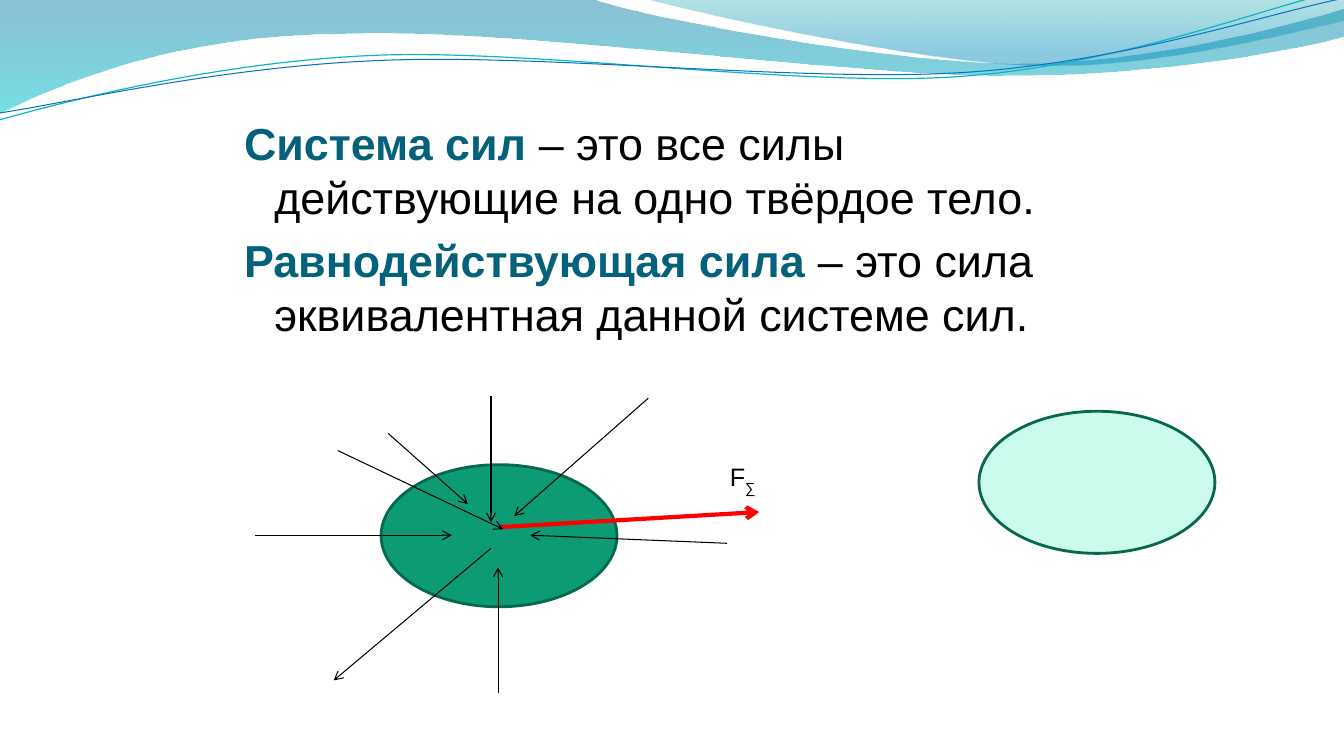
import pptx
import pptx.util
import pptx.dml.color
import pptx.enum.shapes
import pptx.enum.text
import pptx.oxml.ns
import lxml.etree

PX = 9144
COLORS = {
    "ink": "000000",
    "term": "04617B",
    "body": "0C9B74",
    "pale": "CAFBED",
    "rim": "08684E",
    "resultant": "FF0000",
    "deep": "0074A1",
    "aqua": "00C6CF",
    "teal": "00A1A9",
    "sky": "008BBF",
    "cyan_line": "0AB8BF",
    "blue_line": "0F6FC6",
}


def px(length):
    return pptx.util.Emu(round(length * PX))


def rgb(name):
    return pptx.dml.color.RGBColor.from_string(COLORS[name])


def add_xml(parent, tag, **attributes):
    return lxml.etree.SubElement(parent, pptx.oxml.ns.qn(tag), attributes)


def write(paragraph, text, size=32, color="ink", bold=False, baseline=0):
    run = paragraph.add_run()
    run.text = text
    run.font.name = "Arial"
    run.font.size = pptx.util.Pt(size)
    run.font.bold = bold
    run.font.color.rgb = rgb(color)
    if baseline:
        run.font._element.set("baseline", str(baseline * 1000))


class Board:
    def __init__(self, deck):
        self.slide = deck.slides.add_slide(deck.slide_layouts[1])
        self.shapes = self.slide.shapes
        heading = self.shapes.title._element
        heading.getparent().remove(heading)

    def outline(self, start, pieces, close):
        builder = self.shapes.build_freeform(*map(px, start), scale=1.0)
        builder.add_line_segments([tuple(map(px, piece[-2:])) for piece in pieces], close=close)
        shape = builder.convert_to_shape()
        shape.shadow.inherit = False
        segments = list(shape._element.iter(pptx.oxml.ns.qn("a:lnTo")))
        for piece, segment in zip(pieces, segments):
            if len(piece) == 6:
                curve = lxml.etree.Element(pptx.oxml.ns.qn("a:cubicBezTo"))
                for x, y in zip(piece[::2], piece[1::2]):
                    add_xml(curve, "a:pt", x=str(px(x) - shape.left), y=str(px(y) - shape.top))
                segment.getparent().replace(segment, curve)
        return shape

    def wave(self, start, pieces, stops):
        shape = self.outline(start, pieces, True)
        shape.line.fill.background()
        shape.fill.gradient()
        shape.fill.gradient_angle = 270
        for stop, (position, color, opacity) in zip(shape.fill.gradient_stops, stops):
            stop.position = position
            stop.color.rgb = rgb(color)
            tint = stop._gs.find(pptx.oxml.ns.qn("a:srgbClr"))
            add_xml(tint, "a:alpha", val=str(opacity * 1000))

    def ripple(self, start, pieces, color, width):
        shape = self.outline(start, pieces, False)
        shape.fill.background()
        shape.line.color.rgb = rgb(color)
        shape.line.width = pptx.util.Pt(width)

    def definitions(self, box, entries):
        body = self.slide.placeholders[1]
        body.left, body.top, body.width, body.height = map(px, box)
        frame = body.text_frame
        frame.auto_size = pptx.enum.text.MSO_AUTO_SIZE.NONE
        for index, (term, meaning) in enumerate(entries):
            paragraph = frame.add_paragraph() if index else frame.paragraphs[0]
            paragraph.space_before = pptx.util.Pt(6.4)
            properties = paragraph._p.get_or_add_pPr()
            properties.set("marL", str(px(30)))
            properties.set("indent", str(px(-30)))
            add_xml(properties, "a:buNone")
            write(paragraph, term, color="term", bold=True)
            write(paragraph, meaning)

    def ellipse(self, left, top, fill):
        oval = pptx.enum.shapes.MSO_SHAPE.OVAL
        shape = self.shapes.add_shape(oval, px(left), px(top), px(234), px(141))
        shape.shadow.inherit = False
        shape.fill.solid()
        shape.fill.fore_color.rgb = rgb(fill)
        shape.line.color.rgb = rgb("rim")
        shape.line.width = pptx.util.Pt(2)

    def force(self, ends, color="ink", width=0.75):
        straight = pptx.enum.shapes.MSO_CONNECTOR.STRAIGHT
        arrow = self.shapes.add_connector(straight, *map(px, ends))
        arrow.line.color.rgb = rgb(color)
        arrow.line.width = pptx.util.Pt(width)
        add_xml(arrow.line._get_or_add_ln(), "a:tailEnd", type="arrow")
        add_xml(arrow._element.spPr, "a:effectLst")

    def label(self, box, text, subscript):
        frame = self.shapes.add_textbox(*map(px, box)).text_frame
        frame.word_wrap = False
        write(frame.paragraphs[0], text, size=18)
        write(frame.paragraphs[0], subscript, size=18, baseline=-25)


def main():
    deck = pptx.Presentation()
    deck.slide_width, deck.slide_height = px(1333), px(750)
    board = Board(deck)

    board.wave(
        (0, -1),
        [(587, -1), (634, 17, 885, 63, 1011, 63), (1138, 63, 1278, 26, 1333, 9),
         (1335, 36), (1311, 44, 1160, 76, 994, 75), (829, 75, 509, 28, 343, 34),
         (172, 35, 61, 83, -1, 113)],
        [(0, "deep", 45), (1, "aqua", 55)])
    board.wave(
        (639, -1),
        [(679, 11, 909, 62, 1025, 65), (1141, 69, 1282, 32, 1333, 21), (1333, 0)],
        [(0, "teal", 30), (0.8, "sky", 45)])
    board.ripple(
        (-1, 119),
        [(64, 101, 211, 62, 369, 55), (527, 48, 790, 87, 950, 76),
         (1110, 65, 1252, 8, 1331, -10)],
        "cyan_line", 0.85)
    board.ripple(
        (0, 112),
        [(63, 103, 218, 66, 378, 60), (537, 53, 796, 82, 955, 72),
         (1115, 62, 1255, 14, 1334, -2)],
        "blue_line", 0.75)

    board.definitions((232, 110, 900, 515), [
        ("Система сил ", "– это все силы действующие на одно твёрдое тело."),
        ("Равнодействующая сила ", "– это сила эквивалентная данной системе сил."),
    ])

    board.ellipse(378, 461, "body")
    for ends in [
        (253, 531, 448, 531),
        (487, 393, 487, 518),
        (721, 539, 526, 531),
        (494, 688, 494, 563),
        (643, 395, 510, 512),
        (487, 544, 331, 675),
        (385, 430, 464, 500),
    ]:
        board.force(ends)
    board.force((495, 523, 753, 508), color="resultant", width=3)
    board.label((714, 453, 48, 40), "F", "∑")
    board.force((335, 447, 499, 525))
    board.ellipse(971, 408, "pale")

    deck.save("out.pptx")


if __name__ == "__main__":
    main()
